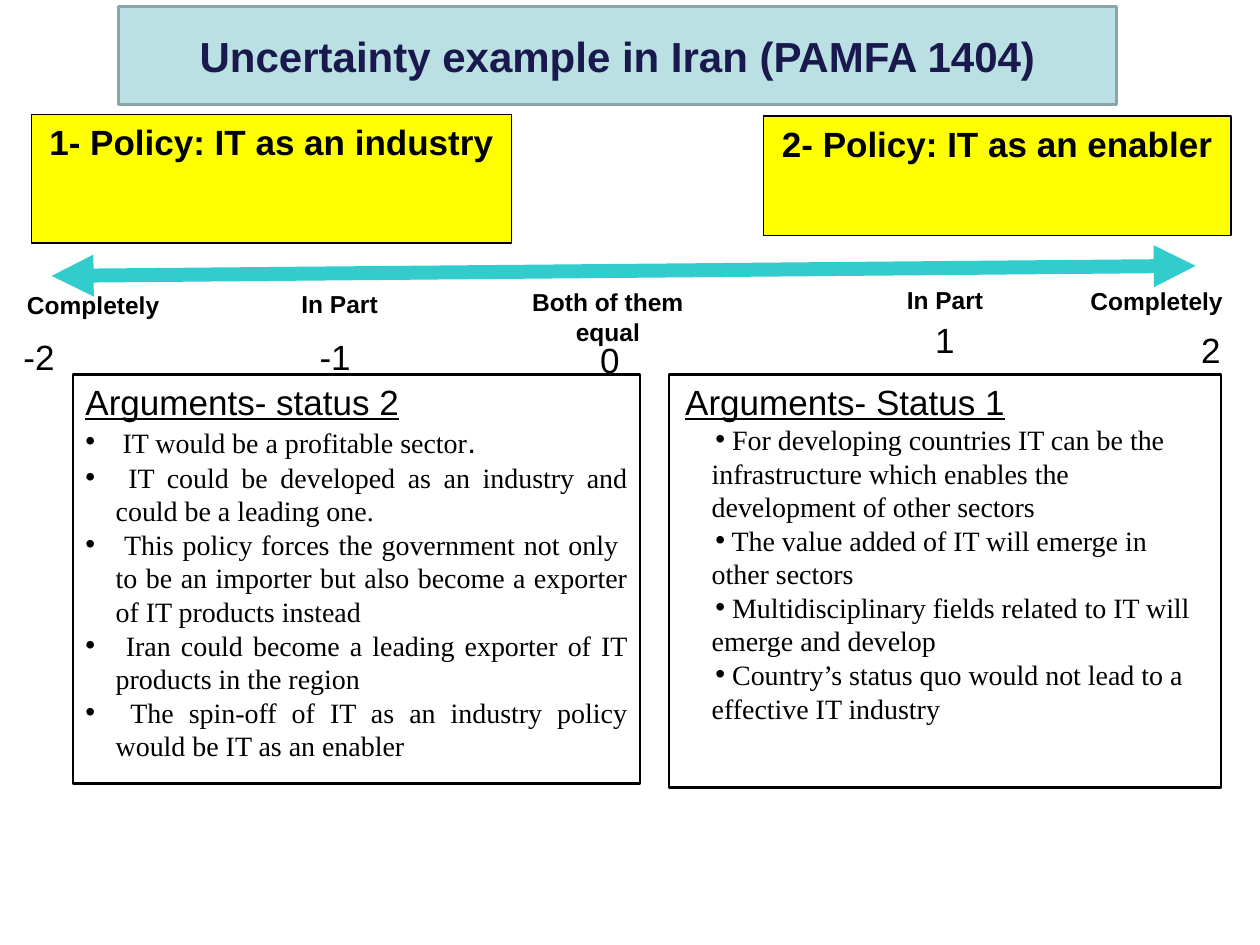
from lxml.etree import SubElement
from pptx import Presentation
from pptx.dml.color import RGBColor
from pptx.enum.shapes import MSO_CONNECTOR, MSO_SHAPE
from pptx.enum.text import MSO_ANCHOR, PP_ALIGN
from pptx.oxml.ns import qn
from pptx.util import Inches, Pt


def rgb(color):
    return RGBColor.from_string(color)


class SlideBuilder:
    """Holds the text style and the current slide."""

    font, serif, ink = "Arial", "Times New Roman", "000000"

    def __init__(self, slide):
        self.slide = slide

    def run(self, p, text, size, font=None, color=None, bold=False, underline=False):
        r = p.add_run()
        r.text = text
        r.font.size = Pt(size)
        r.font.name = font or self.font
        r.font.color.rgb = rgb(color or self.ink)
        r.font.bold = bold
        r.font.underline = underline

    def label(self, at, text, size, bold=False):
        tf = self.slide.shapes.add_textbox(*map(Inches, at)).text_frame
        tf.word_wrap = True
        tf.margin_left = tf.margin_right = Inches(0.06)
        tf.margin_top = tf.margin_bottom = Inches(0.03)
        p = tf.paragraphs[0]
        p.alignment = PP_ALIGN.CENTER
        self.run(p, text, size, bold=bold)

    def box(self, at, fill, line, width, anchor=MSO_ANCHOR.TOP):
        sp = self.slide.shapes.add_shape(MSO_SHAPE.RECTANGLE, *map(Inches, at))
        sp.shadow.inherit = False
        sp.fill.solid()
        sp.fill.fore_color.rgb = rgb(fill)
        sp.line.color.rgb = rgb(line)
        sp.line.width = Pt(width)
        tf = sp.text_frame
        tf.word_wrap = True
        tf.vertical_anchor = anchor
        return tf

    def banner(self, at, text, size, fill, line, width, color=None, anchor=MSO_ANCHOR.TOP):
        p = self.box(at, fill, line, width, anchor).paragraphs[0]
        p.alignment = PP_ALIGN.CENTER
        self.run(p, text, size, color=color, bold=True)

    def arguments(self, at, heading, items, align, first, indent):
        tf = self.box(at, "FFFFFF", self.ink, 1.5)
        p = tf.paragraphs[0]
        p.alignment = PP_ALIGN.LEFT
        p._p.get_or_add_pPr().set("indent", str(Inches(first)))
        self.run(p, heading, 20, underline=True)
        for item in items:
            p = tf.add_paragraph()
            p.alignment = align
            pPr = p._p.get_or_add_pPr()
            pPr.set("marL", str(Inches(0.24)))
            pPr.set("indent", str(Inches(indent)))
            SubElement(pPr, qn("a:buFont"), typeface=self.font)
            SubElement(pPr, qn("a:buChar"), char="•")
            for text, size, font in item:
                self.run(p, text, size, font)

    def double_arrow(self, start, end, color, width):
        c = self.slide.shapes.add_connector(
            MSO_CONNECTOR.STRAIGHT, *map(Inches, start + end))
        c.line.color.rgb = rgb(color)
        c.line.width = Pt(width)
        ln = c.line._get_or_add_ln()
        for tag in ("a:headEnd", "a:tailEnd"):
            SubElement(ln, qn(tag), type="triangle")
        SubElement(c._element.spPr, qn("a:effectLst"))


def main():
    prs = Presentation()
    prs.slide_width, prs.slide_height = Inches(10), Inches(7.5)
    s = SlideBuilder(prs.slides.add_slide(prs.slide_layouts[6]))

    for at, text in [
        ((6.56, 2.23, 1.88, 0.65), "In Part"),
        ((3.91, 2.25, 1.83, 0.65), "Both of them equal"),
        ((1.72, 2.26, 1.95, 0.65), "In Part"),
        ((-0.08, 2.27, 1.64, 0.39), "Completely"),
        ((8.36, 2.24, 1.64, 0.26), "Completely"),
    ]:
        s.label(at, text, 14, bold=True)

    industry = [
        " IT could be developed as an industry and could be a leading one.",
        " This policy forces the government not only  to be an importer "
        "but also become a exporter of IT products instead",
        " Iran could become a leading exporter of IT products in the region",
        " The spin-off of IT as an industry policy would be IT as an enabler",
    ]
    enabler = [
        " For developing countries IT can be the infrastructure which enables "
        "the development of other sectors",
        " The value added of IT will emerge in other sectors",
        " Multidisciplinary fields related to IT will emerge and develop",
        " Country’s status quo would not lead to a effective IT industry",
    ]
    profitable = [(" IT would be a profitable sector", 16, s.serif), (".", 18, s.font)]
    s.arguments((0.58, 2.97, 4.5, 3.25), "Arguments- status 2",
                [profitable] + [[(t, 16, s.serif)] for t in industry],
                PP_ALIGN.JUSTIFY, 0, -0.24)
    s.arguments((5.31, 2.97, 4.38, 3.28), "Arguments- Status 1",
                [[(t, 16, s.serif)] for t in enabler],
                PP_ALIGN.LEFT, 0.03, 0.03)

    s.double_arrow((0.41, 2.19), (9.49, 2.11), "33CCCC", 8)
    s.banner((6.06, 0.92, 3.71, 0.95), "2- Policy: IT as an enabler",
             20, "FFFF00", s.ink, 0.75)
    s.banner((0.25, 0.91, 3.81, 1.02), "1- Policy: IT as an industry",
             20, "FFFF00", s.ink, 0.75)
    s.banner((0.94, 0.05, 7.92, 0.78), "Uncertainty example in Iran (PAMFA 1404)",
             24, "BBE0E3", "8AA6A8", 2, "19194D", MSO_ANCHOR.MIDDLE)

    for left, top, value in [(-0.08, 2.63, "-2"), (9.22, 2.58, "2"),
                             (2.27, 2.63, "-1"), (7.11, 2.5, "1"), (4.45, 2.66, "0")]:
        s.label((left, top, 0.78, 0.41), value, 20)

    prs.save("out.pptx")


if __name__ == "__main__":
    main()
